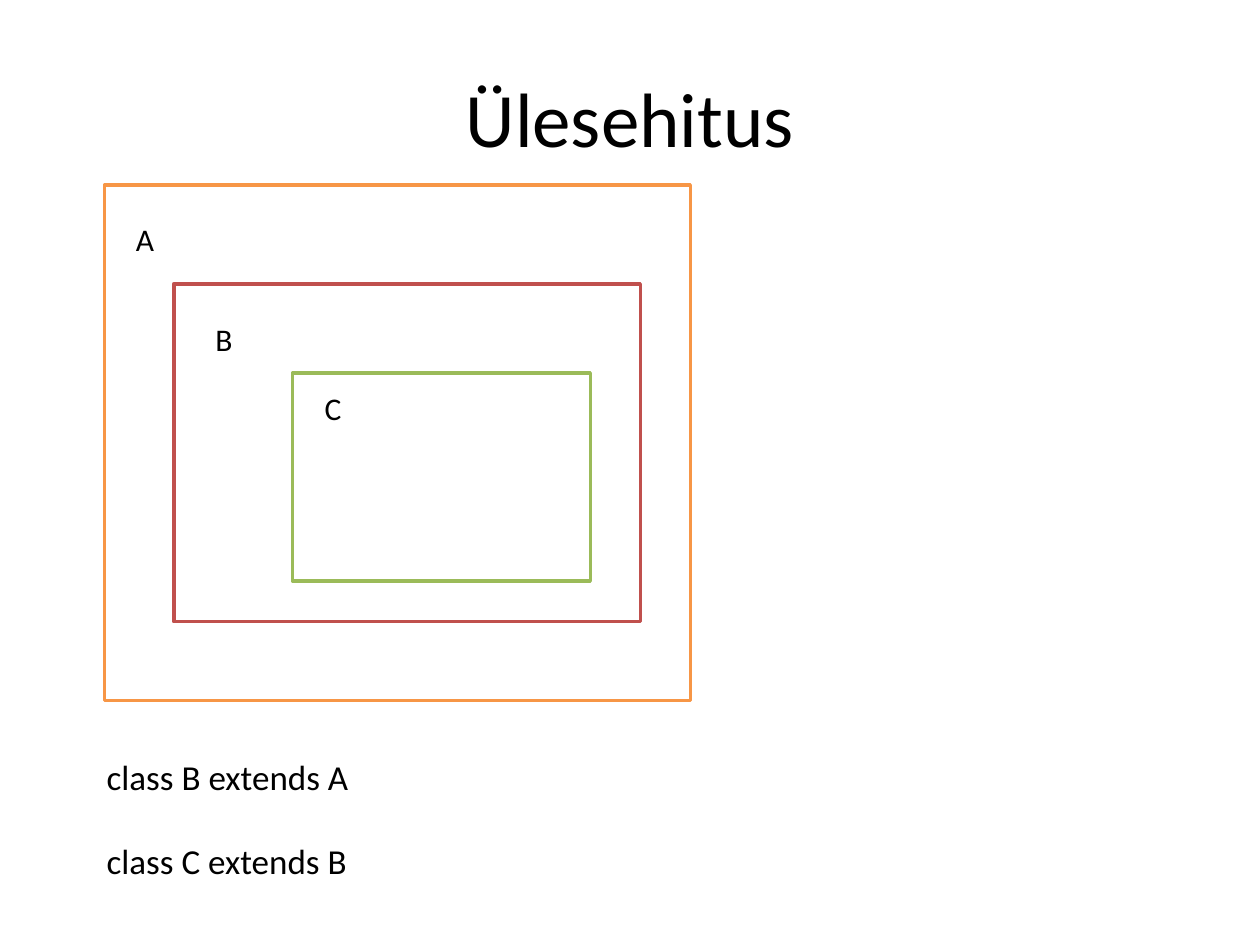
from pptx import Presentation
from pptx import util as u
from pptx.dml import color
from pptx.enum import shapes, text


def rgb(code):
    return color.RGBColor.from_string(code)


def place(box):
    return [u.Pt(n) for n in box]


class Deck:
    font = "Calibri"
    ink = "000000"
    paper = "FFFFFF"

    def __init__(self, wide, high):
        self.prs = Presentation()
        self.prs.slide_width, self.prs.slide_height = u.Pt(wide), u.Pt(high)
        # Layout 5 is "Title Only"
        self.slide = self.prs.slides.add_slide(self.prs.slide_layouts[5])

    def style(self, frame, size):
        for para in frame.paragraphs:
            for run in para.runs:
                run.font.name = self.font
                run.font.size = u.Pt(size)
                run.font.color.rgb = rgb(self.ink)

    def title(self, words, box, size):
        head = self.slide.shapes.title
        head.left, head.top, head.width, head.height = place(box)
        frame = head.text_frame
        frame.text = words
        frame.vertical_anchor = text.MSO_ANCHOR.MIDDLE
        frame.paragraphs[0].alignment = text.PP_ALIGN.CENTER
        self.style(frame, size)

    def rect(self, box, edge):
        rect = self.slide.shapes.add_shape(
            shapes.MSO_SHAPE.RECTANGLE, *place(box))
        rect.shadow.inherit = False
        rect.fill.solid()
        rect.fill.fore_color.rgb = rgb(self.paper)
        rect.line.color.rgb = rgb(edge)
        rect.line.width = u.Pt(2)

    def label(self, words, box, size, gap=0):
        """Add a text box; gap is the space before each later paragraph."""
        frame = self.slide.shapes.add_textbox(*place(box)).text_frame
        frame.word_wrap = True
        frame.auto_size = text.MSO_AUTO_SIZE.SHAPE_TO_FIT_TEXT
        frame.text = words
        for para in frame.paragraphs[1:]:
            para.space_before = u.Pt(gap)
        self.style(frame, size)


def main():
    deck = Deck(720, 540)
    deck.title("Ülesehitus", (36, 21.6, 648, 90), 44)

    # Nested classes, outermost first: name, edge, frame, label box
    nest = [
        ("A", "F79646", (59.7, 105.8, 334.8, 294.6), (70.6, 122.4, 136, 29)),
        ("B", "C0504D", (99.3, 162.2, 266.6, 193), (116, 179.2, 113, 29)),
        ("C", "9BBB59", (167.2, 213.2, 170.2, 119), (178.5, 218.8, 102, 29)),
    ]
    for name, edge, box, spot in nest:
        deck.rect(box, edge)
        deck.label(name, spot, 18)

    deck.label("class B extends A\nclass C extends B",
               (53.8, 428.4, 527, 80), 20, gap=24)
    deck.prs.save("out.pptx")


if __name__ == "__main__":
    main()
